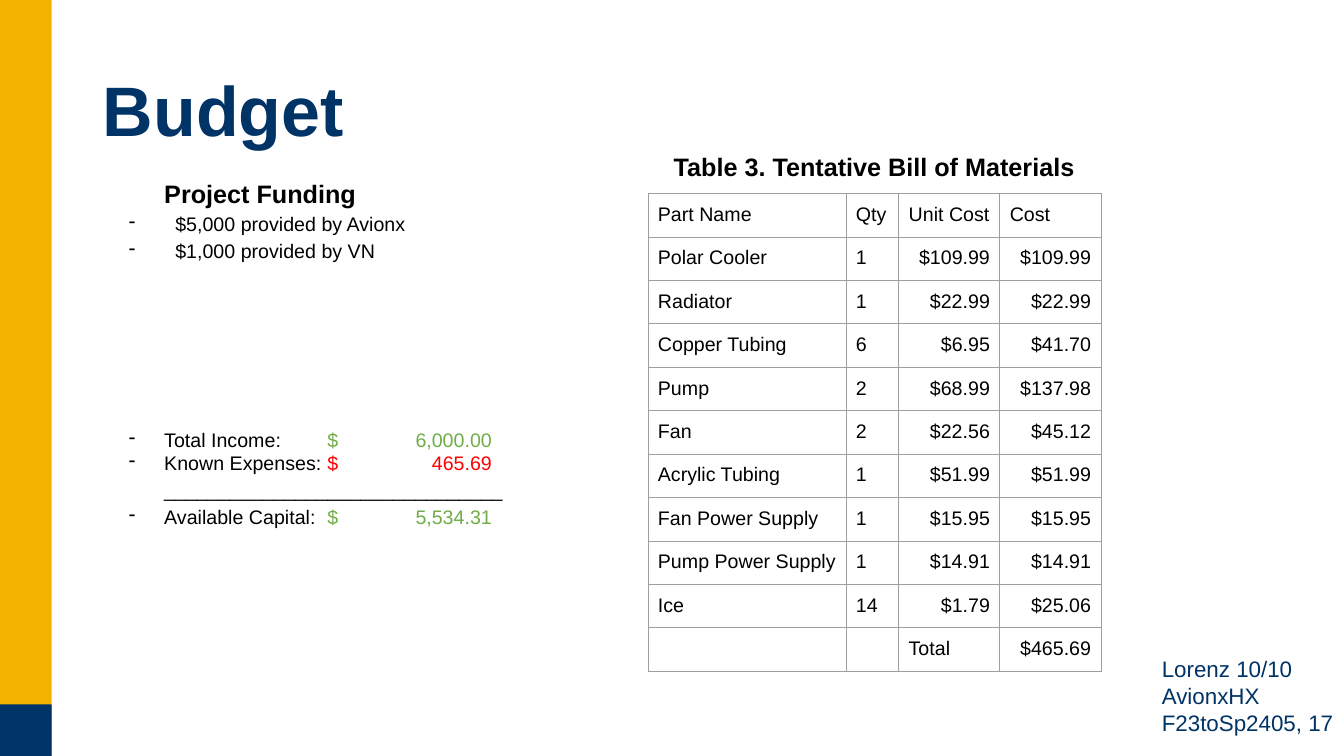
from dataclasses import dataclass

from lxml.etree import SubElement
from pptx import Presentation
from pptx.dml.color import RGBColor
from pptx.enum.shapes import MSO_SHAPE
from pptx.enum.text import MSO_ANCHOR, PP_ALIGN
from pptx.oxml.ns import qn
from pptx.util import Cm, Pt


@dataclass(frozen=True)
class Theme:
    font: str = "Arial"
    gold: str = "F1B300"
    navy: str = "003366"
    black: str = "000000"
    green: str = "70AD47"
    red: str = "FF0000"
    grid: str = "9E9E9E"
    title_size: int = 50
    heading_size: int = 18
    body_size: int = 14
    footer_size: int = 16


class BudgetSlide:
    """Holds the theme and the slide being built."""

    def __init__(self, presentation, theme):
        self.theme = theme
        self.slide = presentation.slides.add_slide(presentation.slide_layouts[6])

    def format_runs(self, paragraph, size, colors, bold=False):
        for run, color in zip(paragraph.runs, colors):
            run.font.name = self.theme.font
            run.font.size = Pt(size)
            run.font.bold = bold
            run.font.color.rgb = RGBColor.from_string(color)

    def block(self, left, top, width, height, color):
        shape = self.slide.shapes.add_shape(
            MSO_SHAPE.RECTANGLE, Cm(left), Cm(top), Cm(width), Cm(height))
        shape.shadow.inherit = False
        shape.fill.solid()
        shape.fill.fore_color.rgb = RGBColor.from_string(color)
        shape.line.fill.background()

    def text_box(self, left, top, width, height):
        shape = self.slide.shapes.add_textbox(Cm(left), Cm(top), Cm(width), Cm(height))
        text_frame = shape.text_frame
        text_frame.word_wrap = True
        text_frame.margin_left = text_frame.margin_right = Cm(0.25)
        text_frame.margin_top = text_frame.margin_bottom = Cm(0.25)
        return text_frame

    def label(self, box, text, size, color, bold=False, align=PP_ALIGN.LEFT):
        text_frame = self.text_box(*box)
        text_frame.text = text
        paragraph = text_frame.paragraphs[0]
        paragraph.alignment = align
        self.format_runs(paragraph, size, [color], bold)
        return text_frame

    def list_line(self, text_frame, parts, indent=1.27, bullet=True, spacing=1.15,
                  before=0, tabs=()):
        """Add a paragraph of (text, color) parts, with a dash and tab stops."""
        paragraph = text_frame.add_paragraph()
        paragraph.line_spacing = spacing
        paragraph.space_before = Pt(before)
        for text, _ in parts:
            paragraph.add_run().text = text
        self.format_runs(paragraph, self.theme.body_size, [color for _, color in parts])
        properties = paragraph._p.get_or_add_pPr()
        properties.set("marL", str(Cm(indent)))
        properties.set("indent", str(Cm(0.38 - indent) if bullet else 0))
        if bullet:
            bullet_color = SubElement(properties, qn("a:buClr"))
            SubElement(bullet_color, qn("a:srgbClr"), val=self.theme.black)
            SubElement(properties, qn("a:buChar"), char="-")
        if tabs:
            tab_list = SubElement(properties, qn("a:tabLst"))
            for position, align in tabs:
                SubElement(tab_list, qn("a:tab"), pos=str(Cm(position)), algn=align)

    def cell(self, cell, text, align):
        cell.text = text
        cell.margin_left = cell.margin_right = Cm(0.25)
        cell.margin_top = cell.margin_bottom = Cm(0.25)
        paragraph = cell.text_frame.paragraphs[0]
        paragraph.alignment = align
        self.format_runs(paragraph, self.theme.body_size, [self.theme.black])
        if not text:
            SubElement(paragraph._p, qn("a:endParaRPr"), sz=str(self.theme.body_size * 100))
        properties = cell._tc.get_or_add_tcPr()
        for side in ("lnL", "lnR", "lnT", "lnB"):
            line = SubElement(properties, qn(f"a:{side}"), w=str(Pt(0.75)))
            fill = SubElement(line, qn("a:solidFill"))
            SubElement(fill, qn("a:srgbClr"), val=self.theme.grid)
        cell.fill.background()

    def table(self, left, top, widths, row_height, rows):
        frame = self.slide.shapes.add_table(
            len(rows), len(widths), Cm(left), Cm(top),
            Cm(sum(widths)), Cm(row_height * len(rows)))
        table = frame.table
        table.first_row = table.horz_banding = False
        for column, width in zip(table.columns, widths):
            column.width = Cm(width)
        for row_index, row in enumerate(rows):
            table.rows[row_index].height = Cm(row_height)
            for column_index, text in enumerate(row):
                align = PP_ALIGN.RIGHT if text.startswith("$") else PP_ALIGN.LEFT
                self.cell(table.cell(row_index, column_index), text, align)


PARTS = [
    ("Polar Cooler", 1, 109.99),
    ("Radiator", 1, 22.99),
    ("Copper Tubing", 6, 6.95),
    ("Pump", 2, 68.99),
    ("Fan", 2, 22.56),
    ("Acrylic Tubing", 1, 51.99),
    ("Fan Power Supply", 1, 15.95),
    ("Pump Power Supply", 1, 14.91),
    ("Ice", 14, 1.79),
]
INCOME = 6000


def main():
    presentation = Presentation()
    presentation.slide_width = Cm(33.87)
    presentation.slide_height = Cm(19.05)
    theme = Theme()
    budget = BudgetSlide(presentation, theme)
    expenses = sum(quantity * price for _, quantity, price in PARTS)

    # Side band
    budget.block(0, 0, 1.3, 19.05, theme.gold)
    budget.block(0, 17.75, 1.3, 1.3, theme.navy)

    # Title
    title = budget.label((2.34, 1.02, 29.21, 3.68), "Budget",
                         theme.title_size, theme.navy, bold=True)
    title.vertical_anchor = MSO_ANCHOR.MIDDLE
    title.paragraphs[0].line_spacing = 0.9

    # Bill of materials
    rows = [("Part Name", "Qty", "Unit Cost", "Cost")]
    rows += [(name, str(quantity), f"${price:.2f}", f"${quantity * price:.2f}")
             for name, quantity, price in PARTS]
    rows.append(("", "", "Total", f"${expenses:.2f}"))
    budget.table(16.33, 4.88, (4.99, 1.33, 2.55, 2.55), 1.06, rows)
    budget.label((16.33, 3.56, 11.4, 2.24), "Table 3. Tentative Bill of Materials",
                 theme.heading_size, theme.black, bold=True, align=PP_ALIGN.CENTER)

    # Project funding
    funding = budget.label((2.62, 4.24, 13.41, 9.37), "Project Funding",
                           theme.heading_size, theme.black, bold=True)
    funding.paragraphs[0]._p.get_or_add_pPr().set("marL", str(Cm(1.27)))
    for source in ("$5,000 provided by Avionx", "$1,000 provided by VN"):
        budget.list_line(funding, [(source, theme.black)], indent=1.55)

    # Balance, with the amounts lined up on tab stops
    balance = [
        ("Total Income:", INCOME, theme.green, 1.15, 115.5),
        ("Known Expenses:", expenses, theme.red, 1, 0),
        ("Available Capital:", INCOME - expenses, theme.green, 1.15, 0),
    ]
    for name, amount, color, spacing, before in balance:
        if name == "Available Capital:":
            budget.list_line(funding, [("_" * 31, theme.black)], bullet=False)
        budget.list_line(
            funding, [(f"{name}\t", theme.black), (f"$\t{amount:,.2f}", color)],
            spacing=spacing, before=before, tabs=((5.38, "l"), (9.53, "r")))

    # Footer
    budget.label((29.03, 16.26, 4.85, 3.07), "Lorenz 10/10 AvionxHX F23toSp2405, 17",
                 theme.footer_size, theme.navy)

    presentation.save("out.pptx")


if __name__ == "__main__":
    main()
